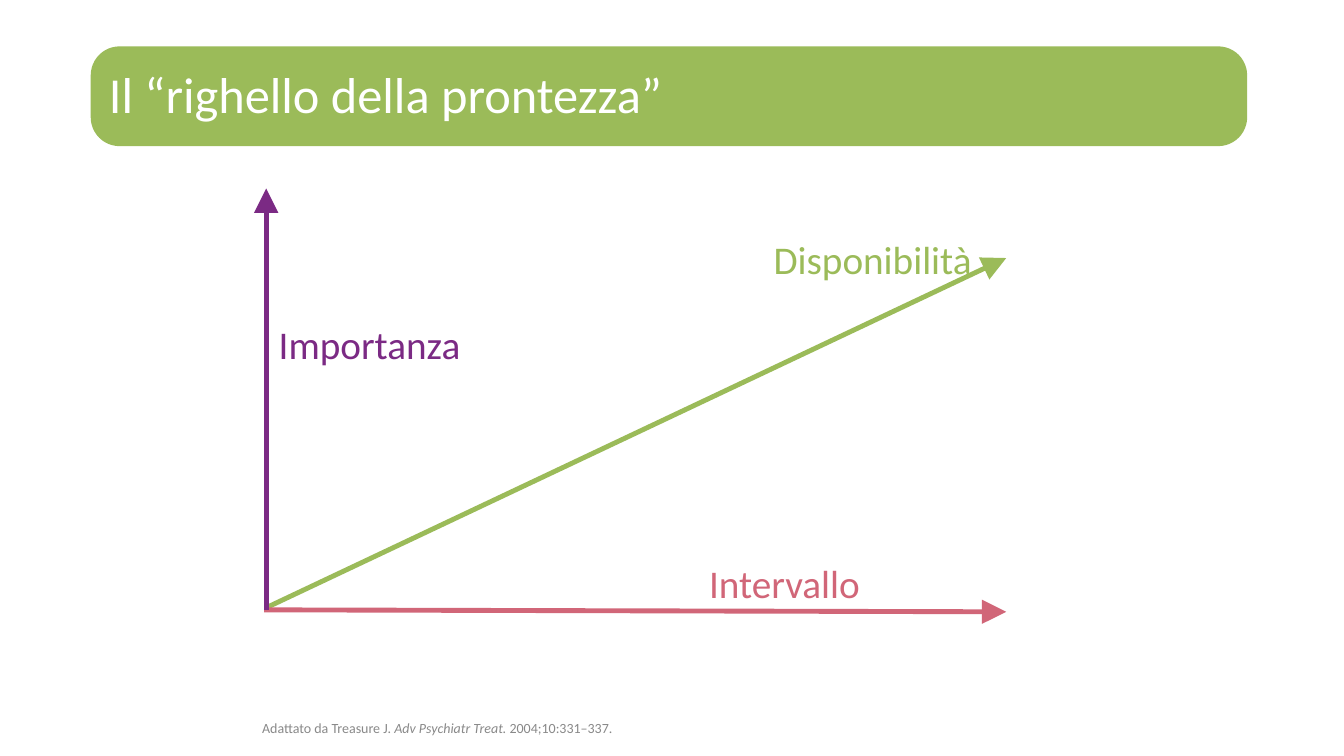
from lxml import etree
from pptx import Presentation
from pptx.dml.color import RGBColor
from pptx.enum.shapes import MSO_CONNECTOR, MSO_SHAPE
from pptx.enum.text import MSO_ANCHOR, PP_ALIGN
from pptx.oxml.ns import qn
from pptx.util import Emu, Pt

PX = 9144  # 100 px to the inch
FONT = "Calibri"
GREEN, PINK, PURPLE = "9BBB59", "D16678", "7B2A84"
WHITE, GREY = "FFFFFF", "898989"
ROUNDED, STRAIGHT = MSO_SHAPE.ROUNDED_RECTANGLE, MSO_CONNECTOR.STRAIGHT
TOP, MIDDLE, BOTTOM = MSO_ANCHOR.TOP, MSO_ANCHOR.MIDDLE, MSO_ANCHOR.BOTTOM
LEFT, CENTER = PP_ALIGN.LEFT, PP_ALIGN.CENTER


def px(*lengths):
    return [Emu(n * PX) for n in lengths]


def rgb(color):
    return RGBColor.from_string(color)


def add_banner(s, box, color):
    sp = s.shapes.add_shape(ROUNDED, *px(*box))
    sp.adjustments[0] = 0.29
    sp.shadow.inherit = False
    sp.fill.solid()
    sp.fill.fore_color.rgb = rgb(color)
    sp.line.fill.background()


def add_text(s, box, runs, size, color, anchor=TOP, align=LEFT, spacing=1.0, inset=(0, 0)):
    """Runs are (text, italic) pairs; inset is horizontal, vertical."""
    tf = s.shapes.add_textbox(*px(*box)).text_frame
    side, edge = px(*inset)
    frame = {"word_wrap": True, "vertical_anchor": anchor,
             "margin_left": side, "margin_right": side,
             "margin_top": edge, "margin_bottom": edge}
    for name, value in frame.items():
        setattr(tf, name, value)
    p = tf.paragraphs[0]
    p.alignment, p.line_spacing = align, spacing
    for text, italic in runs:
        r = p.add_run()
        r.text = text
        for name, value in {"name": FONT, "size": Pt(size), "italic": italic}.items():
            setattr(r.font, name, value)
        r.font.color.rgb = rgb(color)


def add_arrow(s, start, end, color):
    cxn = s.shapes.add_connector(STRAIGHT, *px(*start, *end))
    cxn.line.color.rgb = rgb(color)
    cxn.line.width = Pt(3.5)
    etree.SubElement(cxn.line._get_or_add_ln(), qn("a:tailEnd"),
                     type="triangle", w="lg", len="lg")
    etree.SubElement(cxn._element.spPr, qn("a:effectLst"))


def main():
    prs = Presentation()
    prs.slide_width, prs.slide_height = px(1333, 750)
    s = prs.slides.add_slide(prs.slide_layouts[6])

    # Title banner
    add_banner(s, (90, 46, 1147, 99), GREEN)
    add_text(s, (108, 62, 1118, 72), [("Il “righello della prontezza”", False)],
             36, WHITE, anchor=MIDDLE, spacing=0.8)

    # Source line
    citation = [("Adattato da Treasure J. ", False), ("Adv Psychiatr Treat.", True),
                (" 2004;10:331–337.", False)]
    add_text(s, (260, 646, 982, 85), citation, 10, GREY, anchor=BOTTOM, spacing=0.9)

    # Axes and diagonal
    for start, end, color in [((266, 602), (998, 256), GREEN),
                              ((262, 605), (998, 607), PINK),
                              ((264, 605), (264, 187), PURPLE)]:
        add_arrow(s, start, end, color)

    # Arrow labels
    for label, left, top, width, color in [("Importanza", 256, 313, 221, PURPLE),
                                           ("Intervallo", 657, 550, 242, PINK),
                                           ("Disponibilità", 755, 229, 221, GREEN)]:
        add_text(s, (left, top, width, 57), [(label, False)], 28, color,
                 align=CENTER, inset=(10, 5))

    prs.save("out.pptx")


if __name__ == "__main__":
    main()
